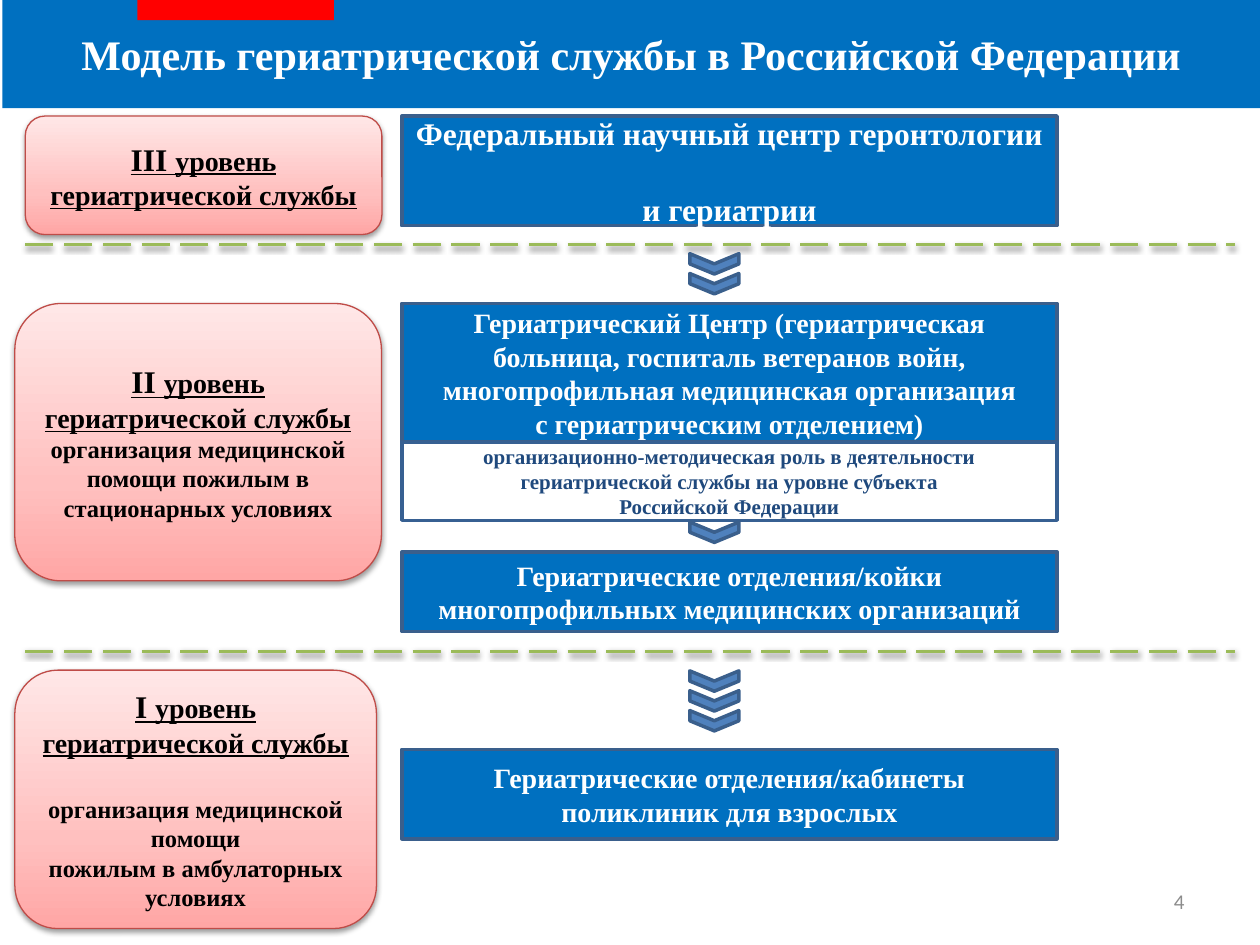
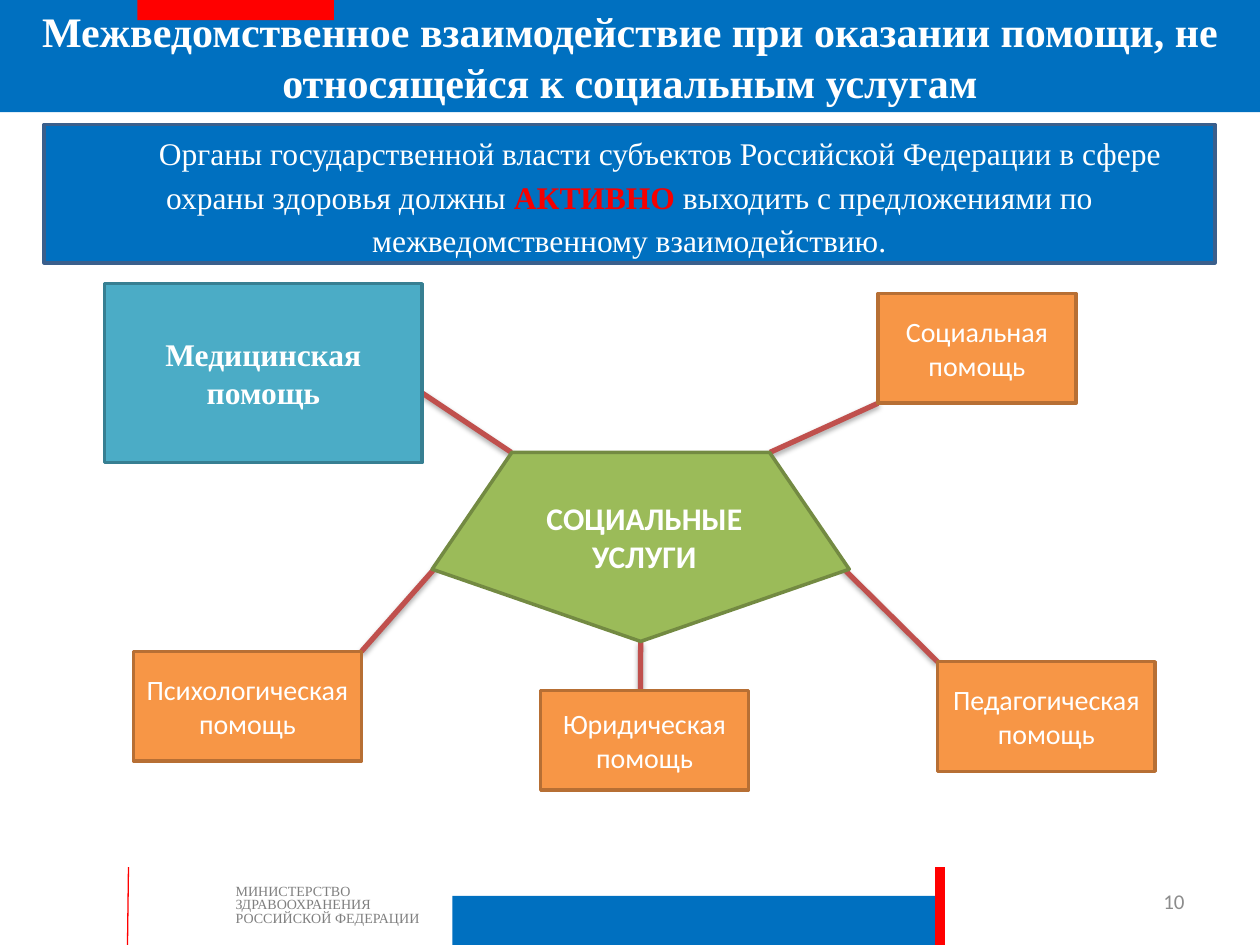
import pptx
import pptx.util
import pptx.dml.color
import pptx.enum.dml
import pptx.enum.shapes
import pptx.enum.text
import pptx.oxml
import pptx.oxml.ns
from dataclasses import dataclass, field

Cm, Pt = pptx.util.Cm, pptx.util.Pt
SHAPE = pptx.enum.shapes.MSO_SHAPE
ALIGN = pptx.enum.text.PP_ALIGN
ANCHOR = pptx.enum.text.MSO_ANCHOR
NS = pptx.oxml.ns.nsdecls("a")
SERIF, SANS = "Times New Roman", "Calibri"


def style(size, color="FFFFFF", name=SERIF, bold=True, underline=None):
    return {"size": Pt(size), "color": color, "name": name, "bold": bold, "underline": underline}


@dataclass
class Theme:
    blue: str = "0070C0"
    blue_edge: str = "3A5F8C"
    chevron: str = "4F81BD"
    red: str = "FF0000"
    spoke: str = "C0504D"
    white: str = "FFFFFF"
    white_edge: str = "376092"
    green: str = "9BBB59"
    green_edge: str = "738A42"
    orange: str = "F79646"
    orange_edge: str = "B76F34"
    teal: str = "4BACC6"
    teal_edge: str = "377F92"
    pink: tuple = ((0, "FFA6A5"), (35, "FFC0BF"), (100, "FFE7E7"))
    pink_edge: str = "BF4C48"
    styles: dict = field(default_factory=lambda: {
        "title": style(24),
        "large": style(18),
        "box": style(16),
        "role": style(12, "1F497D"),
        "level": style(18, "000000", underline=True),
        "service": style(16, "000000", underline=True),
        "scope": style(14, "000000"),
        "lead": style(18, bold=False),
        "alert": style(18, "F60000"),
        "help": style(16, name=SANS, bold=False),
        "core": style(18, name=SANS),
        "ministry": style(8, "7F7F7F", bold=False),
        "number": style(12, "8C8C8C", SANS, bold=False),
    })


T = Theme()

# Content, slide 1 (lengths in cm; a paragraph is a list of (text, style))
TITLE_1 = "Модель гериатрической службы в Российской Федерации"
SERVICE = ("уровень гериатрической службы", "service")
LEVELS = [
    ((0.51, 2.34, 7.19, 2.39), [[("III ", "level"), SERVICE]], 0),
    ((0.3, 6.12, 7.39, 5.59), [
        [("II ", "level"), SERVICE],
        [("организация медицинской помощи пожилым в стационарных условиях", "scope")]], 0),
    ((0.3, 13.51, 7.29, 5.21), [
        [("I ", "level"), SERVICE],
        [("организация медицинской помощи\nпожилым в амбулаторных условиях", "scope")]], 20),
]
BOX_LEFT, BOX_WIDTH = 8.1, 13.21
# top, height, style, paragraphs, space between paragraphs
BOXES = [
    (2.34, 2.21, "large",
     ["Федеральный научный центр геронтологии", "и гериатрии"], 22),
    (6.12, 2.79, "box",
     ["Гериатрический Центр (гериатрическая больница, госпиталь ветеранов войн, "
      "многопрофильная медицинская организация\nс гериатрическим отделением)"], 0),
    (8.92, 1.57, "role",
     ["организационно-методическая роль в деятельности гериатрической службы "
      "на уровне субъекта\nРоссийской Федерации"], 0),
    (11.13, 1.6, "box",
     ["Гериатрические отделения/койки многопрофильных медицинских организаций"], 0),
    (15.11, 1.8, "box",
     ["Гериатрические отделения/кабинеты", "поликлиник для взрослых"], 0),
]
DIVIDERS = [4.93, 13.13]
CHEVRON_X, CHEVRON_STEP = 14.4, 0.4
CHEVRONS = [(5.32, 2), (10.73, 1), (13.73, 3)]  # first centre, count

# Content, slide 2
TITLE_2 = "Межведомственное взаимодействие при оказании помощи, не относящейся к социальным услугам"
LEAD = [[
    ("Органы государственной власти субъектов Российской Федерации в сфере "
     "охраны здоровья должны ", "lead"),
    ("АКТИВНО ", "alert"),
    ("выходить с предложениями по межведомственному взаимодействию.", "lead")]]
CORE = (8.71, 9.12, 8.41, 3.81)
ORANGE = (T.orange, T.orange_edge, "help")
# text, box, look, spoke start within the box, spoke end within the core
HELP = [
    ("Юридическая помощь", (10.9, 13.92, 4.19, 2.01), ORANGE, (0.48, 0), (0.5, 1)),
    ("Психологическая помощь", (2.69, 13.13, 4.6, 2.21), ORANGE, (1, 0), (0.02, 0.58)),
    ("Педагогическая помощь", (18.9, 13.34, 4.39, 2.21), ORANGE, (0, 0), (0.97, 0.58)),
    ("Социальная помощь", (17.7, 5.92, 3.99, 2.21), ORANGE, (0, 1), (0.81, 0)),
    ("Медицинская помощь", (2.11, 5.72, 6.4, 3.61), (T.teal, T.teal_edge, "large"),
     (1, 0.61), (0.19, 0)),
]
MINISTRY = "МИНИСТЕРСТВО ЗДРАВООХРАНЕНИЯ РОССИЙСКОЙ ФЕДЕРАЦИИ"


def rgb(value):
    return pptx.dml.color.RGBColor.from_string(value)


def set_effects(s, alpha=None):
    """Replace the inherited shadow with none, or with a soft one below."""
    shadow = "" if alpha is None else (
        '<a:outerShdw blurRad="39400" dist="20300" dir="5400000" rotWithShape="0">'
        f'<a:srgbClr val="000000"><a:alpha val="{alpha * 1000}"/></a:srgbClr></a:outerShdw>')
    s._element.spPr.append(pptx.oxml.parse_xml(f"<a:effectLst {NS}>{shadow}</a:effectLst>"))


def write(s, paragraphs, align=ALIGN.CENTER, anchor=ANCHOR.MIDDLE, gap=0, line=None, indent=0):
    tf = s.text_frame
    tf.word_wrap = True
    tf.vertical_anchor = anchor
    for i, runs in enumerate(paragraphs):
        p = tf.add_paragraph() if i else tf.paragraphs[0]
        formats = {"alignment": align, "space_before": Pt(gap if i else 0), "line_spacing": line}
        for key, value in formats.items():
            setattr(p, key, value)
        if indent:
            p._p.get_or_add_pPr().set("indent", str(Cm(indent)))
        for text, look in runs:
            for j, part in enumerate(text.split("\n")):
                if j:
                    p.add_line_break()
                r = p.add_run()
                r.text = part
                for key, value in T.styles[look].items():
                    if key == "color":
                        r.font.color.rgb = rgb(value)
                    else:
                        setattr(r.font, key, value)


def add_box(sp, at, fill, edge=None, kind=SHAPE.RECTANGLE, weight=2, alpha=None):
    s = sp.add_shape(kind, *map(Cm, at))
    if isinstance(fill, str):
        s.fill.solid()
        s.fill.fore_color.rgb = rgb(fill)
    else:
        stops = "".join(f'<a:gs pos="{pos * 1000}"><a:srgbClr val="{c}"/></a:gs>' for pos, c in fill)
        s._element.spPr.insert(2, pptx.oxml.parse_xml(
            f'<a:gradFill {NS} rotWithShape="1"><a:gsLst>{stops}</a:gsLst>'
            '<a:lin ang="16200000" scaled="0"/></a:gradFill>'))
    if edge:
        s.line.color.rgb = rgb(edge)
        s.line.width = Pt(weight)
    else:
        s.line.fill.background()
    set_effects(s, alpha)
    return s


def add_text(sp, at, text, look, **formats):
    s = sp.add_textbox(*map(Cm, at))
    write(s, [[(text, look)]], **formats)


def add_line(sp, start, end, color, weight, alpha=None, dash=None):
    s = sp.add_connector(pptx.enum.shapes.MSO_CONNECTOR.STRAIGHT, *map(Cm, start + end))
    s.line.color.rgb = rgb(color)
    s.line.width = Pt(weight)
    if dash:
        s.line.dash_style = dash
    set_effects(s, alpha)


def point_in(at, share):
    left, top, width, height = at
    return left + width * share[0], top + height * share[1]


def add_frame(sp, title, number, left, height):
    """Title band, red tab and page number."""
    band = add_box(sp, (left, 0, 25.4 - left, height), T.blue)
    write(band, [[(title, "title")]])
    add_box(sp, (2.77, 0, 3.96, 0.41), T.red)
    add_text(sp, (18.21, 17.65, 5.92, 1.02), number, "number", align=ALIGN.RIGHT)


def build_model(sp):
    add_frame(sp, TITLE_1, "4", 0.05, 2.18)

    # Levels on the left
    for at, paragraphs, gap in LEVELS:
        s = add_box(sp, at, T.pink, T.pink_edge, SHAPE.ROUNDED_RECTANGLE, 0.75, 38)
        write(s, paragraphs, gap=gap)

    # Institutions on the right
    for top, height, look, texts, gap in BOXES:
        fill, edge = (T.white, T.white_edge) if look == "role" else (T.blue, T.blue_edge)
        s = add_box(sp, (BOX_LEFT, top, BOX_WIDTH, height), fill, edge)
        write(s, [[(text, look)] for text in texts], gap=gap)

    # Dividers and chevrons
    for y in DIVIDERS:
        add_line(sp, (0.51, y), (24.89, y), T.green, 2, 38, pptx.enum.dml.MSO_LINE.LONG_DASH)
    width, height = 0.41, 0.99
    for first, count in CHEVRONS:
        for i in range(count):
            y = first + i * CHEVRON_STEP
            s = add_box(sp, (CHEVRON_X - width / 2, y - height / 2, width, height),
                        T.chevron, T.blue_edge, SHAPE.CHEVRON)
            s.rotation = 90


def build_cooperation(sp):
    # Spokes lie under the boxes
    for _, at, _, start, end in HELP:
        add_line(sp, point_in(at, start), point_in(CORE, end), T.spoke, 3, 35)

    add_frame(sp, TITLE_2, "10", 0, 2.26)
    lead = add_box(sp, (0.89, 2.51, 23.6, 2.79), T.blue, T.blue_edge)
    write(lead, LEAD, line=1.15, indent=1.24)

    # Core and kinds of help
    s = add_box(sp, CORE, T.green, T.green_edge, SHAPE.REGULAR_PENTAGON)
    s.rotation = 180
    add_text(sp, (10.69, 9.93, 4.6, 1.8), "СОЦИАЛЬНЫЕ УСЛУГИ", "core", anchor=ANCHOR.TOP)
    for text, at, (fill, edge, look), _, _ in HELP:
        write(add_box(sp, at, fill, edge), [[(text, look)]])

    # Footer
    add_text(sp, (4.5, 17.73, 4.6, 0.99), MINISTRY, "ministry",
             align=ALIGN.LEFT, anchor=ANCHOR.TOP, line=0.8)
    add_line(sp, (2.59, 17.48), (2.57, 19.05), T.red, 0.75)
    add_box(sp, (9.12, 18.06, 9.93, 0.99), T.blue)
    add_box(sp, (18.85, 17.48, 0.2, 1.57), T.red)


def main():
    prs = pptx.Presentation()
    prs.slide_width, prs.slide_height = Cm(25.4), Cm(19.05)
    for build in (build_model, build_cooperation):
        build(prs.slides.add_slide(prs.slide_layouts[6]).shapes)
    prs.save("out.pptx")


if __name__ == "__main__":
    main()
